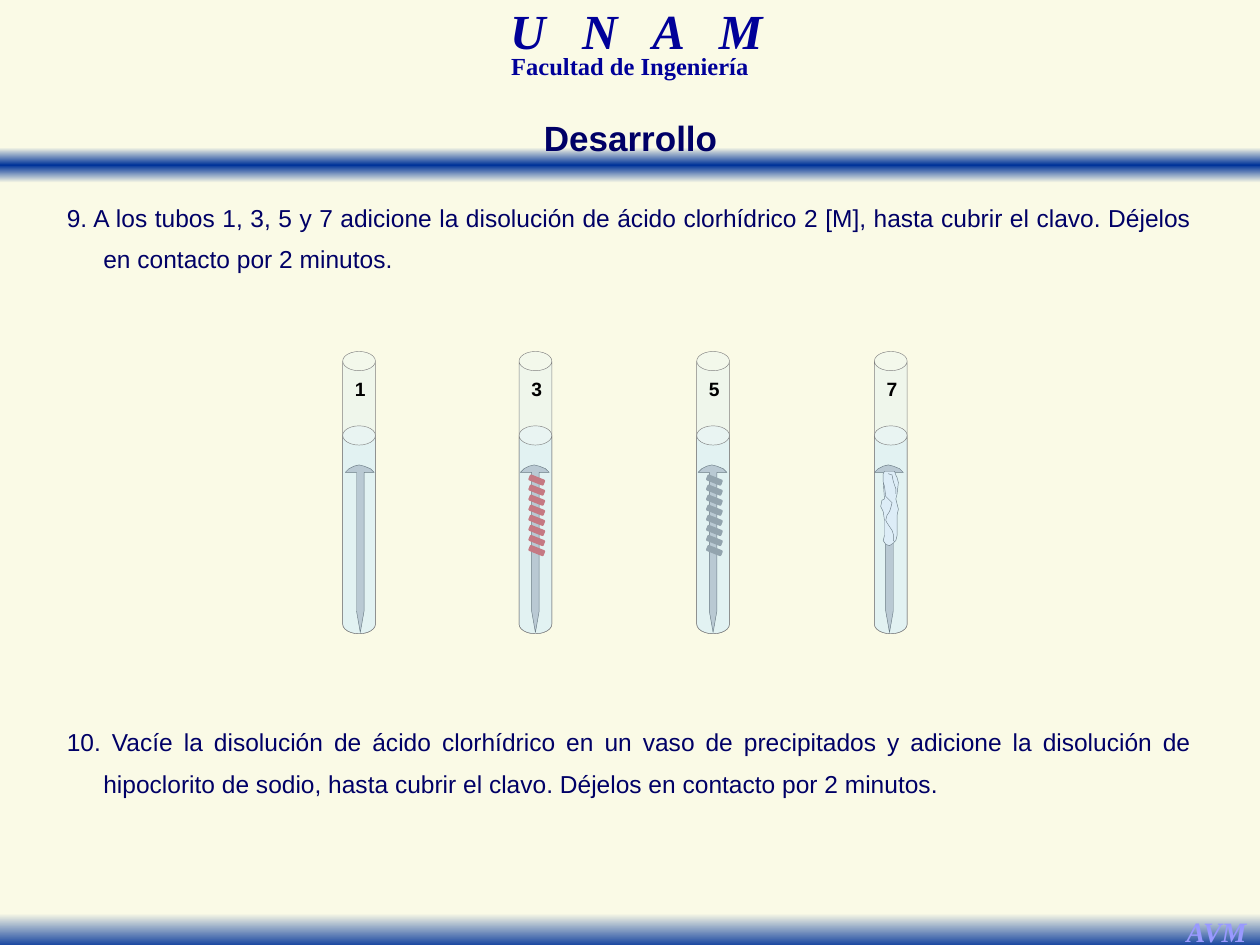
from pptx import Presentation
from pptx.dml.color import RGBColor
from pptx.enum.shapes import MSO_SHAPE
from pptx.enum.text import MSO_ANCHOR, MSO_AUTO_SIZE, PP_ALIGN
from pptx.oxml.ns import qn
from pptx.util import Inches, Pt
from lxml import etree

rgb = RGBColor.from_string


def write(sp, text, size, color, font="Arial", bold=False, italic=False,
          align=PP_ALIGN.CENTER, ls=1.0, wrap=True, hang=0, spacing=0):
    tf = sp.text_frame
    tf.auto_size = MSO_AUTO_SIZE.NONE
    tf.word_wrap = wrap
    tf.vertical_anchor = MSO_ANCHOR.TOP
    p = tf.paragraphs[0]
    p.alignment = align
    p.line_spacing = ls
    p.space_before = Pt(0)
    pPr = p._p.get_or_add_pPr()
    pPr.set("marL", str(Inches(hang)))
    pPr.set("indent", str(-Inches(hang)))
    etree.SubElement(pPr, qn("a:buNone"))
    r = p.add_run()
    r.text = text
    r.font.size = Pt(size)
    r.font.name = font
    r.font.bold = bold
    r.font.italic = italic
    r.font.color.rgb = rgb(color)
    if spacing:
        r._r.get_or_add_rPr().set("spc", str(spacing * 100))


def paint(sp, fill, line, width=0.25, opacity=None):
    sp.shadow.inherit = False
    sp.line.color.rgb = rgb(line)
    sp.line.width = Pt(width)
    if fill is None:
        sp.fill.background()
        return
    sp.fill.solid()
    sp.fill.fore_color.rgb = rgb(fill)
    if opacity:
        clr = sp._element.spPr.find(qn("a:solidFill"))[0]
        etree.SubElement(clr, qn("a:alpha"), val=str(opacity * 1000))


prs = Presentation()
prs.slide_width = Inches(10)
prs.slide_height = Inches(7.5)
s = prs.slides.add_slide(prs.slide_layouts[3])
s.background.fill.solid()
s.background.fill.fore_color.rgb = rgb("FAFAE6")

bands = [(1.17, [(0, "FAFAE6"), (50, "003399"), (100, "FAFAE6")]),
         (7.25, [(0, "FAFAE6"), (100, "003399")])]
for top, stops in bands:
    sp = s.shapes.add_shape(MSO_SHAPE.RECTANGLE, 0, Inches(top), Inches(10), Inches(0.28))
    sp.shadow.inherit = False
    sp.line.fill.background()
    sp.fill.gradient()
    sp.fill.gradient_angle = 270
    gs_list = sp._element.spPr.find(qn("a:gradFill")).find(qn("a:gsLst"))
    for gs in list(gs_list):
        gs_list.remove(gs)
    for pos, color in stops:
        gs = etree.SubElement(gs_list, qn("a:gs"), pos=str(pos * 1000))
        etree.SubElement(gs, qn("a:srgbClr"), val=color)
    s.shapes._spTree.insert(2, sp._element)

serif = dict(font="Times New Roman", bold=True)
headings = [
    (3.09, 0.08, 3.92, 0.43, "U N A M", 28, "000099", dict(italic=True, ls=0.7, spacing=7)),
    (3.21, 0.42, 3.58, 0.26, "Facultad de Ingeniería", 14, "000099", dict(ls=0.7)),
    (9.31, 7.21, 0.69, 0.37, "AVM", 16, "9999FF", dict(italic=True, wrap=False)),
]
for x, y, w, h, text, size, color, fmt in headings:
    sp = s.shapes.add_textbox(Inches(x), Inches(y), Inches(w), Inches(h))
    write(sp, text, size, color, **serif, **fmt)

step = dict(align=PP_ALIGN.JUSTIFY, hang=0.29)
body = [
    (4.21, 0.74, 1.59, 0.52, "Desarrollo", 20, dict(bold=True, wrap=False)),
    (0.43, 1.47, 9.13, 0.72, "9. A los tubos 1, 3, 5 y 7 adicione la disolución de ácido "
     "clorhídrico 2 [M], hasta cubrir el clavo. Déjelos en contacto por 2 minutos.", 14, step),
    (0.43, 5.63, 9.13, 0.76, "10. Vacíe la disolución de ácido clorhídrico en un vaso de "
     "precipitados y adicione la disolución de hipoclorito de sodio, hasta cubrir el clavo. "
     "Déjelos en contacto por 2 minutos.", 14, step),
]
for sp, (x, y, w, h, text, size, fmt) in zip(list(s.placeholders), body):
    sp.left, sp.top, sp.width, sp.height = Inches(x), Inches(y), Inches(w), Inches(h)
    write(sp, text, size, "000066", ls=1.4, **fmt)

nail = [(9, 6), (0, 6), (3, 3), (7, 1), (11, 0), (15, 1), (20, 3), (23, 6),
        (15, 6), (15, 116), (12, 133), (9, 116)]
cotton = [(710, 430), (709, 431), (706, 433), (703, 432), (701, 429), (702, 425),
          (702, 413), (701, 406), (700, 404), (699, 402), (700, 397), (702, 396),
          (701, 382), (701, 376), (702, 374), (708, 374), (710, 374), (711, 377),
          (712, 379), (713, 383), (712, 392), (711, 396), (712, 400), (713, 404),
          (712, 409), (712, 425), (711, 429)]
folds = [[(705, 376), (708, 377), (709, 382), (710, 385), (711, 388), (711, 392)],
         [(701, 383), (702, 386), (703, 394), (706, 397), (708, 399), (707, 403),
          (706, 406), (704, 409), (703, 413), (704, 415), (706, 418), (708, 421),
          (709, 424), (709, 429), (710, 430)]]
tubes = [("1", 2.72, 2.74, None), ("3", 4.12, 4.13, "C00000"),
         ("5", 5.53, 5.54, "595959"), ("7", 6.94, 6.94, None)]

for label, left, nail_left, coil in tubes:
    g = s.shapes.add_group_shape().shapes
    outlines = [([(round(nail_left * 100) + x, 369 + y) for x, y in nail],
                 "A6A6A6", "000000")]
    if label == "7":
        outlines.append((cotton, "F0F0F0", "0D0D0D"))
        outlines += [(fold, None, "0D0D0D") for fold in folds]
    for points, fill, line in outlines:
        fb = g.build_freeform(*points[0], scale=Inches(0.01))
        fb.add_line_segments(points[1:], close=fill is not None)
        paint(fb.convert_to_shape(), fill, line)
    if coil:
        for i in range(8):
            sp = g.add_shape(MSO_SHAPE.ROUNDED_RECTANGLE, Inches(left + 0.08),
                             Inches(3.79 + 0.08 * i), Inches(0.12), Inches(0.04))
            sp.rotation = 21.8
            paint(sp, coil, coil, 0.75)
    for top, height, opacity, text in [(2.79, 2.24, 23, label), (3.38, 1.65, 37, None)]:
        sp = g.add_shape(MSO_SHAPE.CAN, Inches(left), Inches(top), Inches(0.26), Inches(height))
        sp.adjustments[0] = 0.587
        paint(sp, "CCECFF", "808080", opacity=opacity)
        if text:
            sp.text_frame.margin_left = Inches(0.02)
            sp.text_frame.margin_right = 0
            write(sp, text, 11, "000000", bold=True)

prs.save("out.pptx")
